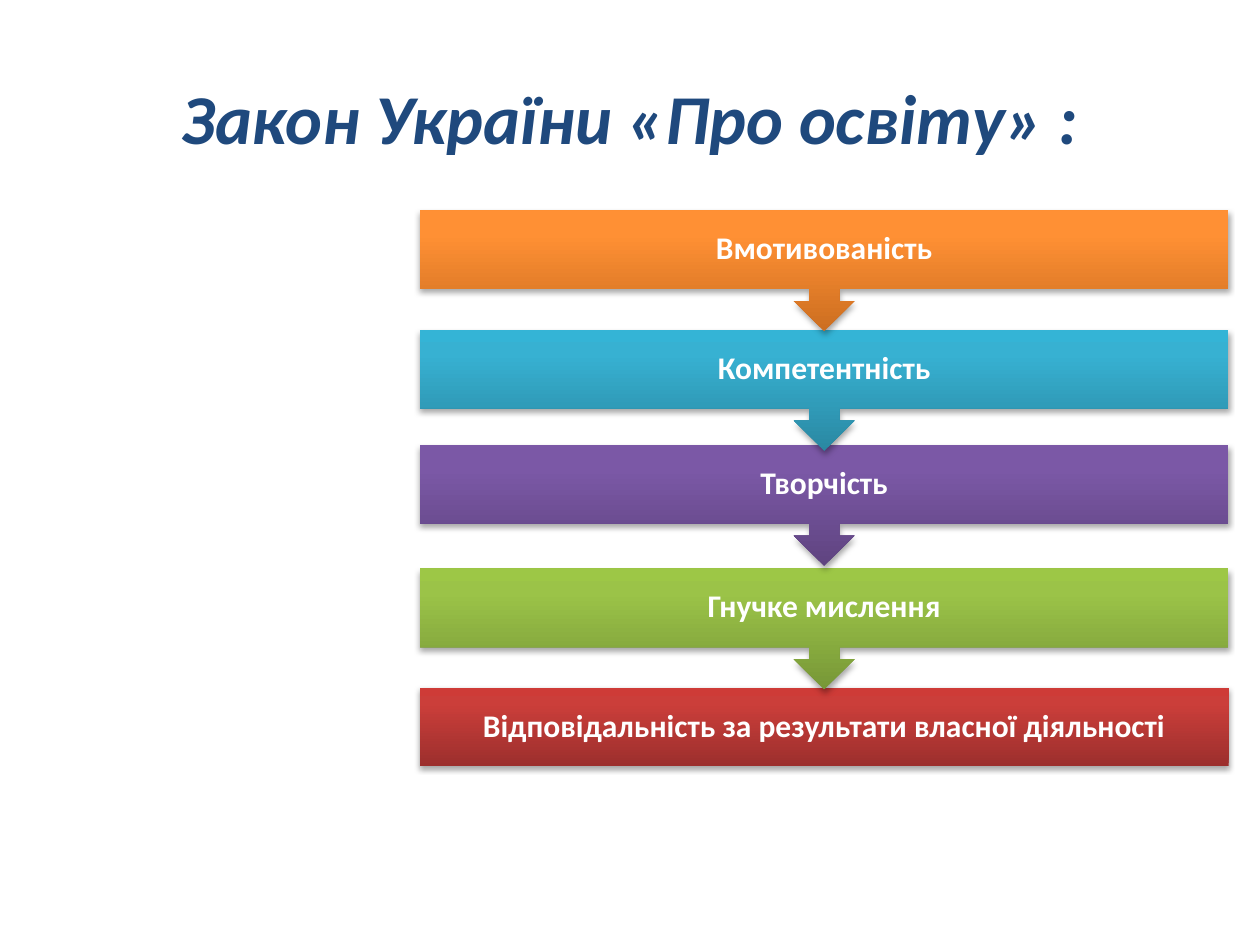
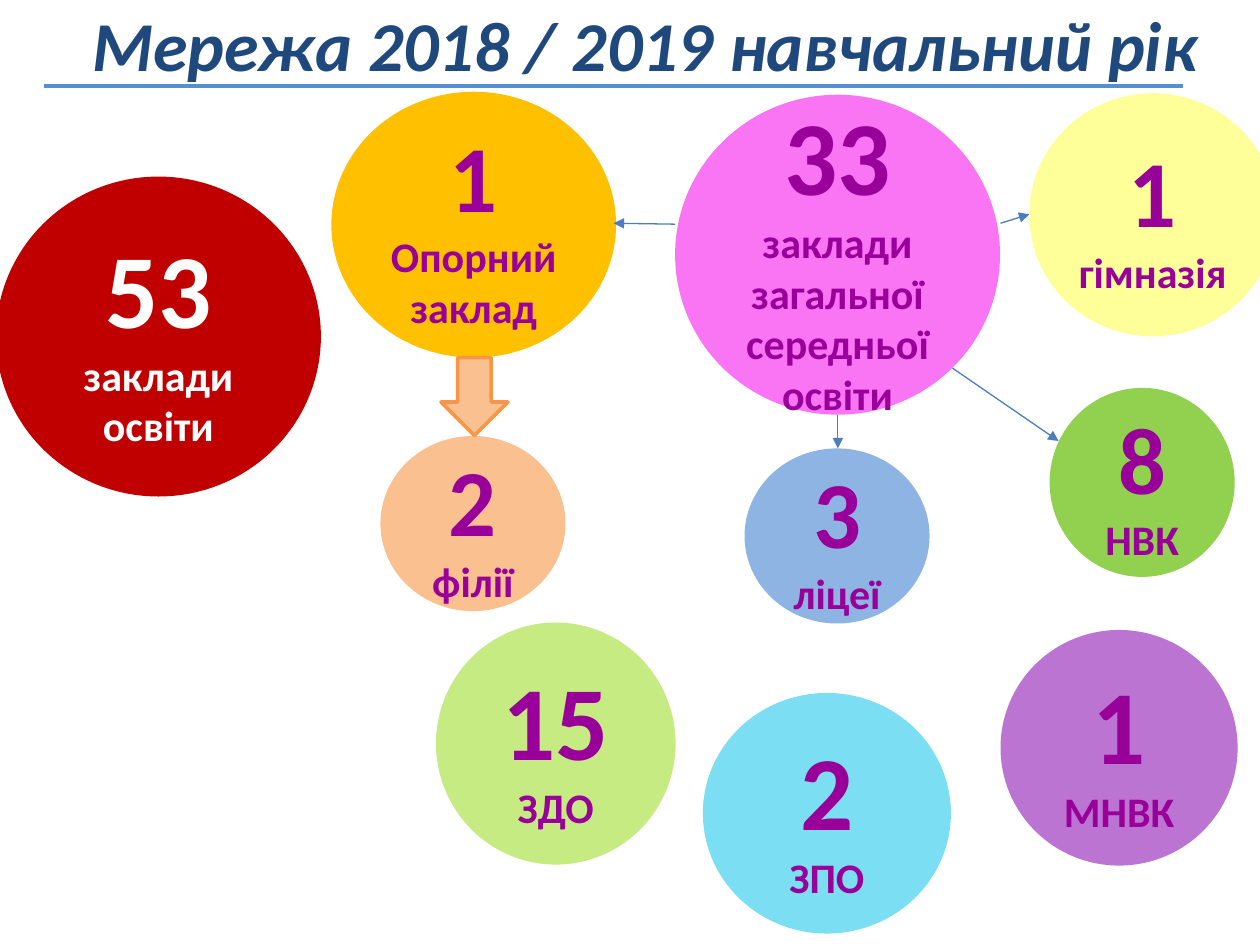
import dataclasses
import lxml.etree
import pptx
import pptx.dml.color
import pptx.enum.shapes
import pptx.enum.text
import pptx.oxml.ns
import pptx.util

Cm = pptx.util.Cm
Pt = pptx.util.Pt
rgb = pptx.dml.color.RGBColor.from_string
qn = pptx.oxml.ns.qn
kind = pptx.enum.shapes.MSO_SHAPE
anchor = pptx.enum.text.MSO_ANCHOR


@dataclasses.dataclass
class Theme:
    font: str = "Calibri"
    title: str = "1F497D"
    white: str = "FFFFFF"
    plum: str = "990099"
    rule: str = "558ED5"
    link: str = "4B7EBC"
    peach: str = "FAC090"
    edge: str = "F79646"
    head: int = 40
    bar: int = 18
    label: int = 24
    mid: int = 54
    big: int = 60


theme = Theme()


def write(box, text, sizes, color, middle=True, italic=False):
    frame = box.text_frame
    frame.word_wrap = True
    frame.vertical_anchor = anchor.MIDDLE if middle else anchor.TOP
    frame.text = text
    for para, size in zip(frame.paragraphs, sizes):
        para.alignment = pptx.enum.text.PP_ALIGN.CENTER
        for run in para.runs:
            run.font.name = theme.font
            run.font.size = Pt(size)
            run.font.bold = True
            run.font.italic = italic
            run.font.color.rgb = rgb(color)


def join(slide, ends, color, width, arrow):
    line = slide.shapes.add_connector(
        pptx.enum.shapes.MSO_CONNECTOR.STRAIGHT, *map(Cm, ends))
    line.line.color.rgb = rgb(color)
    line.line.width = Pt(width)
    if arrow:
        tail = lxml.etree.SubElement(line.line._get_or_add_ln(), qn("a:tailEnd"))
        tail.set("type", "triangle")
    lxml.etree.SubElement(line._element.spPr, qn("a:effectLst"))


deck = pptx.Presentation()
deck.slide_width = Cm(25.4)
deck.slide_height = Cm(19.05)
blank = deck.slide_layouts[6]

law = deck.slides.add_slide(blank)
title = law.shapes.add_textbox(Cm(1.27), Cm(0.76), Cm(22.86), Cm(3.18))
write(title, "Закон України «Про освіту» :", [theme.head], theme.title, italic=True)

steps = [
    ("Вмотивованість", 4.24, ("CC6E20", "FF9034", "FF9136")),
    ("Компетентність", 6.65, ("2A88A2", "37B1D2", "34B4D6")),
    ("Творчість", 8.97, ("5F4480", "7B58A6", "7C57A8")),
    ("Гнучке мислення", 11.46, ("779737", "9BC348", "9DC746")),
    ("Відповідальність за результати власної діяльності", 13.87,
     ("9C2F2D", "CB3E3A", "CE3B37")),
]
for name, top, tones in reversed(steps):
    last = name == steps[-1][0]
    form = kind.RECTANGLE if last else kind.DOWN_ARROW_CALLOUT
    bar = law.shapes.add_shape(
        form, Cm(8.46), Cm(top), Cm(16.31), Cm(1.57 if last else 2.44))
    bar.line.fill.background()
    bar.fill.gradient()
    bar.fill.gradient_angle = 90
    stops = bar._element.spPr.find(qn("a:gradFill")).find(qn("a:gsLst"))
    stops.clear()
    for place, tone in zip((0, 80, 100), tones):
        stop = lxml.etree.SubElement(stops, qn("a:gs"), pos=str(place * 1000))
        lxml.etree.SubElement(stop, qn("a:srgbClr"), val=tone)
    bar.shadow.inherit = False
    effect = bar._element.spPr.find(qn("a:effectLst"))
    shade = lxml.etree.SubElement(
        effect, qn("a:outerShdw"), blurRad=str(Pt(3.1)), dist=str(Pt(1.8)),
        dir="5400000", rotWithShape="0")
    black = lxml.etree.SubElement(shade, qn("a:srgbClr"), val="000000")
    lxml.etree.SubElement(black, qn("a:alpha"), val="35000")
    write(bar, name, [theme.bar], theme.white)
    frame = bar.text_frame
    frame.margin_left = frame.margin_right = Cm(0.36)
    frame.margin_top = frame.margin_bottom = Cm(0.36)
    frame.paragraphs[0].line_spacing = 0.9

net = deck.slides.add_slide(blank)
join(net, (0.89, 1.73, 23.85, 1.73), theme.rule, 2, False)
title = net.shapes.add_textbox(Cm(0.74), Cm(-0.1), Cm(24.51), Cm(1.96))
write(title, "Мережа 2018 / 2019 навчальний рік", [theme.head], theme.title,
      middle=False, italic=True)

discs = [
    ("8\nНВК", theme.mid, "92D050", theme.plum, (21.16, 7.82, 3.73, 3.81)),
    ("3\nліцеї", theme.mid, "8EB4E3", theme.plum, (15.01, 9.04, 3.73, 3.53)),
    ("33\nзаклади загальної середньої освіти", theme.big, "F975F3", theme.plum,
     (13.61, 1.91, 6.55, 6.45)),
    ("1\nОпорний заклад", theme.mid, "FFC000", theme.plum, (6.68, 1.85, 5.74, 5.36)),
    ("1\nгімназія", theme.mid, "FFFF99", theme.plum, (20.75, 1.88, 4.98, 4.9)),
    ("2\nфілії", theme.mid, theme.peach, theme.plum, (7.67, 8.79, 3.73, 3.53)),
    ("2\nЗПО", theme.big, "7CDEF2", theme.plum, (14.17, 13.97, 5, 4.85)),
    ("15\nЗДО", theme.big, "C6EB83", theme.plum, (8.79, 12.55, 4.83, 4.88)),
    ("1\nМНВК", theme.big, "BC74D2", theme.plum, (20.17, 12.7, 4.78, 4.75)),
    ("53\nзаклади освіти", theme.big, "C00000", theme.white, (-0.08, 3.56, 6.55, 6.45)),
]
for text, size, fill, ink, place in discs:
    disc = net.shapes.add_shape(kind.OVAL, *map(Cm, place))
    disc.shadow.inherit = False
    disc.fill.solid()
    disc.fill.fore_color.rgb = rgb(fill)
    disc.line.fill.background()
    write(disc, text, [size, theme.label], ink)

arrow = net.shapes.add_shape(kind.DOWN_ARROW, Cm(8.89), Cm(7.21), Cm(1.35), Cm(1.57))
arrow.shadow.inherit = False
arrow.fill.solid()
arrow.fill.fore_color.rgb = rgb(theme.peach)
arrow.line.color.rgb = rgb(theme.edge)
arrow.line.width = Pt(2)

links = [
    (13.61, 4.52, 12.37, 4.5),
    (16.89, 8.36, 16.89, 9.04),
    (20.17, 4.5, 20.75, 4.32),
    (19.2, 7.42, 21.34, 8.89),
]
for ends in links:
    join(net, ends, theme.link, 0.75, True)

deck.save("out.pptx")
